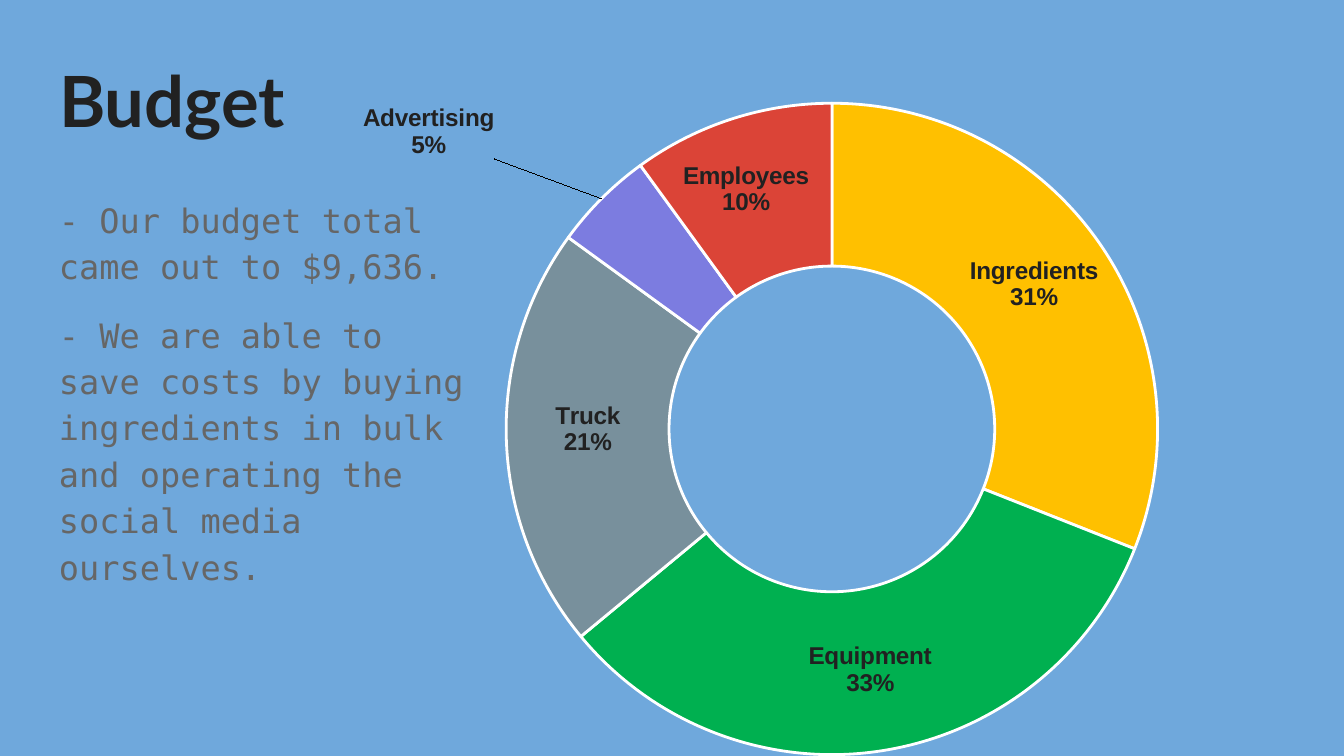
from pptx import Presentation
from pptx.chart.data import CategoryChartData
from pptx.dml.color import RGBColor
from pptx.enum.chart import XL_CHART_TYPE as ChartType
from pptx.enum.text import MSO_ANCHOR as Anchor, PP_ALIGN as Align
from pptx.oxml import parse_xml
from pptx.oxml.ns import nsdecls
from pptx.util import Inches, Pt

INK = "212121"
SLICES = [
    ("Ingredients", 31, "FFC000"),
    ("Equipment", 33, "00B050"),
    ("Truck", 21, "78909C"),
    ("Advertising", 5, "7C7CE0"),
    ("Employees", 10, "DB4437"),
]
# Label shifts by slice, as shares of the chart's width and height
LABEL_SHIFTS = {0: (0, -0.01), 2: (0, -0.01), 3: (-0.22, -0.18), 4: (-0.01, -0.01)}
NOTES = [
    "- Our budget total came out to $9,636.",
    "- We are able to save costs by buying ingredients in bulk "
    "and operating the social media ourselves.",
]


def color(value):
    return RGBColor.from_string(value)


def style(font, name, size, value, bold=False):
    font.name, font.size, font.bold = name, Pt(size), bold
    font.color.rgb = color(value)


deck = Presentation()
deck.slide_width = Inches(10)
deck.slide_height = deck.slide_width * 9 // 16
page = deck.slides.add_slide(deck.slide_layouts[5])
page.background.fill.solid()
page.background.fill.fore_color.rgb = color("6FA8DC")

# Title and notes
title = page.shapes.title
title.left, title.top = Inches(0.34), Inches(0.32)
title.width, title.height = Inches(9.32), Inches(0.88)
notes = page.shapes.add_textbox(Inches(0.34), Inches(1.34), Inches(3.29), Inches(3.65))
for box in (title, notes):
    frame = box.text_frame
    frame.word_wrap = True
    frame.vertical_anchor = Anchor.TOP
    frame.margin_left = frame.margin_right = Inches(0.1)
    frame.margin_top = frame.margin_bottom = Inches(0.1)

title.text_frame.text = "Budget"
heading = title.text_frame.paragraphs[0]
heading.alignment = Align.LEFT
style(heading.font, "Lato", 37.8, INK, True)

notes.text_frame.text = "\n".join(NOTES)
for para in notes.text_frame.paragraphs:
    para.line_spacing = 1.15
    para.space_after = Pt(12)
    style(para.font, "DejaVu Sans Mono", 18, "666666")

# Budget doughnut
data = CategoryChartData()
data.categories = [name for name, _, _ in SLICES]
data.add_series("Series 1", [share for _, share, _ in SLICES])
chart = page.shapes.add_chart(
    ChartType.DOUGHNUT, Inches(2.29), Inches(0.63), Inches(7.8), Inches(5.13), data
).chart
chart.has_legend = False
chart.has_title = False
chart.font.name, chart.font.size = "Arial", Pt(10)
plot = chart.plots[0]
plot.vary_by_categories = True
series = plot.series[0]
for index, (_, _, fill) in enumerate(SLICES):
    slice_format = series.points[index].format
    slice_format.fill.solid()
    slice_format.fill.fore_color.rgb = color(fill)
    slice_format.line.color.rgb = color("FFFFFF")
    slice_format.line.width = Pt(1.5)

labels = series.data_labels
labels.show_value = False
labels.show_category_name = True
labels.show_percentage = True
labels.number_format = "0%"
labels.number_format_is_linked = False
style(labels.font, "Arial", 13, INK, True)
labels_xml = labels._element
separator = parse_xml(f"<c:separator {nsdecls('c')}>\n</c:separator>")
labels_xml.find("{*}showBubbleSize").addnext(separator)

for position, (index, (shift_x, shift_y)) in enumerate(LABEL_SHIFTS.items()):
    labels_xml.insert(position, parse_xml(
        f"<c:dLbl {nsdecls('c')}><c:idx val='{index}'/><c:layout><c:manualLayout>"
        f"<c:x val='{shift_x}'/><c:y val='{shift_y}'/></c:manualLayout></c:layout>"
        "<c:showLegendKey val='0'/><c:showVal val='0'/><c:showCatName val='1'/>"
        "<c:showSerName val='0'/><c:showPercent val='1'/><c:showBubbleSize val='0'/>"
        "<c:separator>\n</c:separator></c:dLbl>"
    ))

# Plot area: the ring is 4.85 inches wide, centred in the chart
ring_width, ring_height = 4.85 / 7.8, 4.85 / 5.13
plot_area = chart._chartSpace.chart.plotArea
for old_layout in plot_area.findall("{*}layout"):
    plot_area.remove(old_layout)
plot_area.insert(0, parse_xml(
    f"<c:layout {nsdecls('c')}><c:manualLayout><c:layoutTarget val='inner'/>"
    "<c:xMode val='edge'/><c:yMode val='edge'/>"
    f"<c:x val='{(1 - ring_width) / 2:.3f}'/><c:y val='{(1 - ring_height) / 2:.3f}'/>"
    f"<c:w val='{ring_width:.3f}'/><c:h val='{ring_height:.3f}'/>"
    "</c:manualLayout></c:layout>"
))

deck.save("out.pptx")
